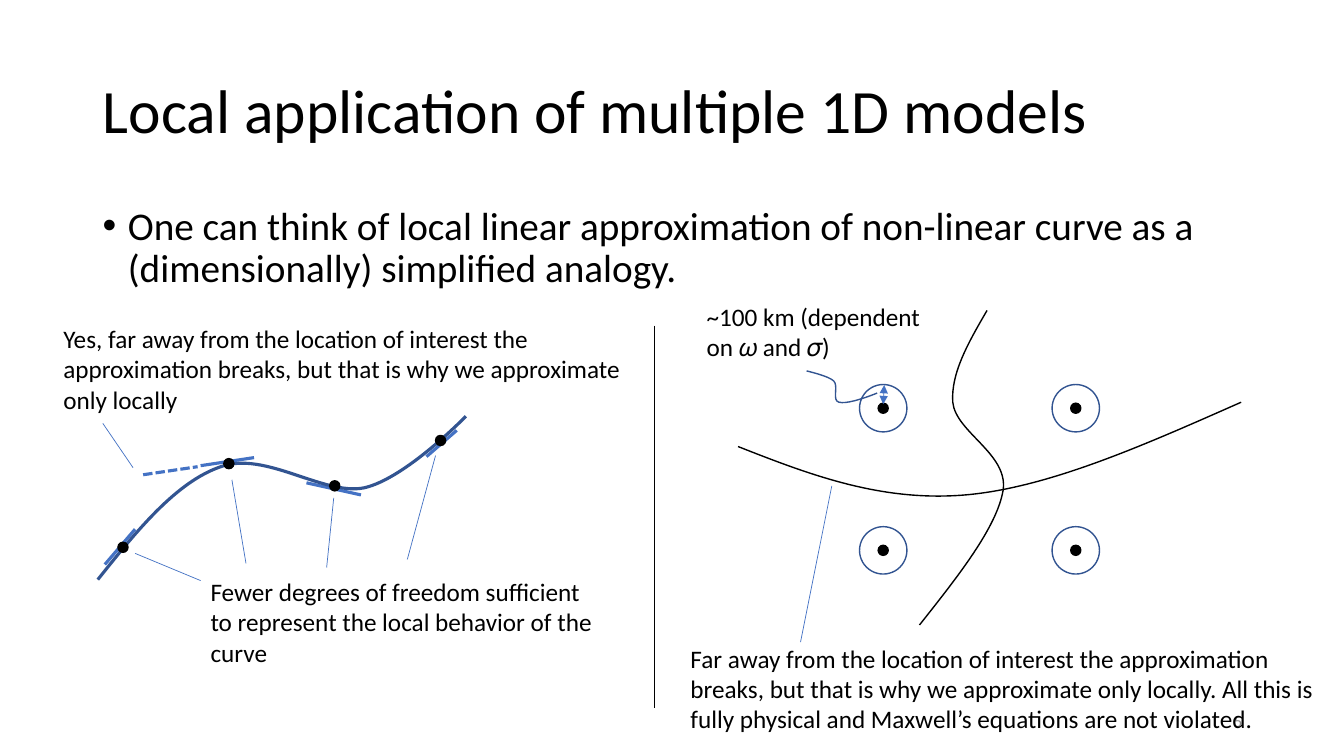
import itertools
from typing import NamedTuple

import lxml.etree
import pptx
import pptx.dml.color
import pptx.enum.shapes
import pptx.enum.text
import pptx.oxml
import pptx.oxml.ns
import pptx.util

Inches = pptx.util.Inches
Pt = pptx.util.Pt
qn = pptx.oxml.ns.qn
ANCHOR = pptx.enum.text.MSO_ANCHOR
ALIGN = pptx.enum.text.PP_ALIGN

FONT = "Calibri"
BLACK, BLUE, DARK_BLUE, GREY = "000000", "4472C4", "325491", "8C8C8C"
DOT, CIRCLE = 0.1, 0.47

Point = tuple[float, float]


class Segment(NamedTuple):
    start: Point
    end: Point
    color: str = BLUE
    width: float = 0.5
    dash: str = ""
    arrows: bool = False


class Curve(NamedTuple):
    """A chain of cubic Béziers: a start, then three points for each piece."""
    points: list[Point]
    color: str
    width: float


class Caption(NamedTuple):
    text: str
    box: tuple[float, float, float, float]


TANGENTS = [
    Segment((3.04, 4.79), (3.58, 4.91), width=2.25),
    Segment((4.23, 4.53), (4.53, 4.27), width=2.25),
    Segment((1.04, 5.6), (1.34, 5.25), width=2.25),
    Segment((1.99, 4.62), (2.52, 4.54), width=2.25),
]
POINTERS = [
    Segment((1.34, 5.49), (1.99, 5.76)),
    Segment((2.3, 4.76), (2.44, 5.59)),
    Segment((3.31, 4.94), (3.24, 5.63)),
    Segment((4.32, 4.52), (4.04, 5.55)),
    Segment((1.42, 4.71), (1.96, 4.63), width=2.25, dash="sysDash"),
    Segment((1.02, 4.2), (1.32, 4.64)),
    Segment((6.49, 3.23), (6.49, 7.02), BLACK),
    Segment((8.77, 3.82), (8.76, 4.01), arrows=True),
    Segment((8.25, 4.82), (7.94, 6.37)),
]
NONLINEAR_CURVE = Curve(
    [(0.97, 5.75), (1.36, 5.26), (1.75, 4.78), (2.19, 4.63), (2.63, 4.47),
     (3.21, 4.92), (3.61, 4.84), (4.02, 4.75), (4.62, 4.13), (4.62, 4.13)],
    DARK_BLUE, 2.25)
MAP_CURVES = [
    Curve([(8.7, 3.9), (8.55, 3.96), (8.39, 4.01), (8.32, 3.99), (8.25, 3.97),
           (8.32, 3.83), (8.27, 3.78), (8.22, 3.73), (8, 3.68), (8, 3.68)],
          DARK_BLUE, 1),
    Curve([(9.79, 3.08), (9.61, 3.39), (9.43, 3.7), (9.45, 3.99), (9.48, 4.29),
           (10, 4.5), (9.95, 4.86), (9.89, 5.23), (9.5, 5.72), (9.12, 6.2)],
          BLACK, 1),
    Curve([(7.32, 4.43), (8.03, 4.71), (8.74, 4.98), (9.57, 4.91),
           (10.4, 4.84), (11.36, 4.41), (12.31, 3.99)], BLACK, 1),
]
CURVE_DOT_HEIGHTS = [5.43, 4.6, 4.82, 4.37]
STATIONS = list(itertools.product([8.76, 10.67], [4.05, 5.46]))
CAPTIONS = [
    Caption("Fewer degrees of freedom sufficient to represent the local "
            "behavior of the curve", (1.99, 5.67, 4.1, 1.01)),
    Caption("Yes, far away from the location of interest the approximation "
            "breaks, but that is why we approximate only locally",
            (0.53, 3.16, 6.14, 1.01)),
    Caption("~100 km (dependent on 𝜔 and 𝜎)", (6.91, 2.94, 2.4, 0.71)),
    Caption("Far away from the location of interest the approximation breaks, "
            "but that is why we approximate only locally. All this is fully "
            "physical and Maxwell’s equations are not violated.",
            (6.75, 6.33, 6.57, 1.01)),
]


def rgb(color: str) -> pptx.dml.color.RGBColor:
    return pptx.dml.color.RGBColor.from_string(color)


def write(shape, text: str, *, size: float = 18, color: str = BLACK,
          align=ALIGN.LEFT, anchor=ANCHOR.TOP, spacing: float = 1.0,
          bullet: bool = False) -> None:
    frame = shape.text_frame
    frame.word_wrap = True
    frame.vertical_anchor = anchor
    paragraph = frame.paragraphs[0]
    if bullet:
        properties = paragraph._p.get_or_add_pPr()
        properties.set("marL", str(Inches(0.25)))
        properties.set("indent", str(Inches(-0.25)))
        lxml.etree.SubElement(properties, qn("a:buFont"), typeface="Arial")
        lxml.etree.SubElement(properties, qn("a:buChar"), char="•")
    paragraph.alignment = align
    paragraph.line_spacing = spacing
    run = paragraph.add_run()
    run.text = text
    run.font.name = FONT
    run.font.size = Pt(size)
    run.font.color.rgb = rgb(color)


def add_text(slide, box: tuple[float, float, float, float], text: str, **style) -> None:
    write(slide.shapes.add_textbox(*map(Inches, box)), text, **style)


def add_segment(slide, segment: Segment) -> None:
    connector = slide.shapes.add_connector(
        pptx.enum.shapes.MSO_CONNECTOR.STRAIGHT,
        *map(Inches, segment.start + segment.end))
    connector.line.color.rgb = rgb(segment.color)
    connector.line.width = Pt(segment.width)
    outline = connector.line._get_or_add_ln()
    if segment.dash:
        lxml.etree.SubElement(outline, qn("a:prstDash"), val=segment.dash)
    if segment.arrows:
        for end in ("a:headEnd", "a:tailEnd"):
            lxml.etree.SubElement(outline, qn(end), type="triangle")
    lxml.etree.SubElement(connector._element.spPr, qn("a:effectLst"))


def add_curve(slide, curve: Curve) -> None:
    """Lay straight pieces between the anchors, then bend each into a Bézier."""
    anchors = [(Inches(x), Inches(y)) for x, y in curve.points[::3]]
    builder = slide.shapes.build_freeform(*anchors[0])
    builder.add_line_segments(anchors[1:], close=False)
    outline = builder.convert_to_shape()
    pieces = list(outline._element.iter(qn("a:lnTo")))
    for index, piece in enumerate(pieces):
        piece.tag = qn("a:cubicBezTo")
        controls = curve.points[3 * index + 1:3 * index + 3]
        for position, (x, y) in enumerate(controls):
            control = lxml.etree.Element(
                qn("a:pt"), x=str(Inches(x) - outline.left),
                y=str(Inches(y) - outline.top))
            piece.insert(position, control)
    outline.shadow.inherit = False
    outline.fill.background()
    outline.line.color.rgb = rgb(curve.color)
    outline.line.width = Pt(curve.width)


def add_circle(slide, x: float, y: float, diameter: float, line: str, fill: str = "") -> None:
    """Draw a circle centred on (x, y), hollow unless a fill is given."""
    circle = slide.shapes.add_shape(
        pptx.enum.shapes.MSO_SHAPE.OVAL, Inches(x - diameter / 2),
        Inches(y - diameter / 2), Inches(diameter), Inches(diameter))
    circle.shadow.inherit = False
    if fill:
        circle.fill.solid()
        circle.fill.fore_color.rgb = rgb(fill)
    else:
        circle.fill.background()
    circle.line.color.rgb = rgb(line)
    circle.line.width = Pt(1)


def main() -> None:
    deck = pptx.Presentation()
    deck.slide_width, deck.slide_height = Inches(13.33), Inches(7.5)
    slide = deck.slides.add_slide(deck.slide_layouts.get_by_name("Title Only"))

    for tangent in TANGENTS:
        add_segment(slide, tangent)
    title = slide.shapes.title
    title.left, title.top, title.width, title.height = map(Inches, (0.92, 0.4, 11.5, 1.45))
    write(title, "Local application of multiple 1D models",
          size=44, anchor=ANCHOR.MIDDLE, spacing=0.9)
    add_text(slide, (0.92, 2, 11.5, 4.76),
             "One can think of local linear approximation of non-linear curve "
             "as a (dimensionally) simplified analogy.",
             size=28, spacing=0.9, bullet=True)
    add_text(slide, (9.42, 6.95, 3, 0.4), "5", size=12, color=GREY,
             align=ALIGN.RIGHT, anchor=ANCHOR.MIDDLE)

    add_curve(slide, NONLINEAR_CURVE)
    for index, y in enumerate(CURVE_DOT_HEIGHTS):
        add_circle(slide, 1.22 + 1.05 * index, y, DOT, BLACK, BLACK)
    for x, y in STATIONS:
        add_circle(slide, x, y, DOT, BLACK, BLACK)
        add_circle(slide, x, y, CIRCLE, DARK_BLUE)
    for curve in MAP_CURVES:
        add_curve(slide, curve)
    for pointer in POINTERS:
        add_segment(slide, pointer)
    for caption in CAPTIONS:
        add_text(slide, caption.box, caption.text)
    deck.save("out.pptx")


if __name__ == "__main__":
    main()
